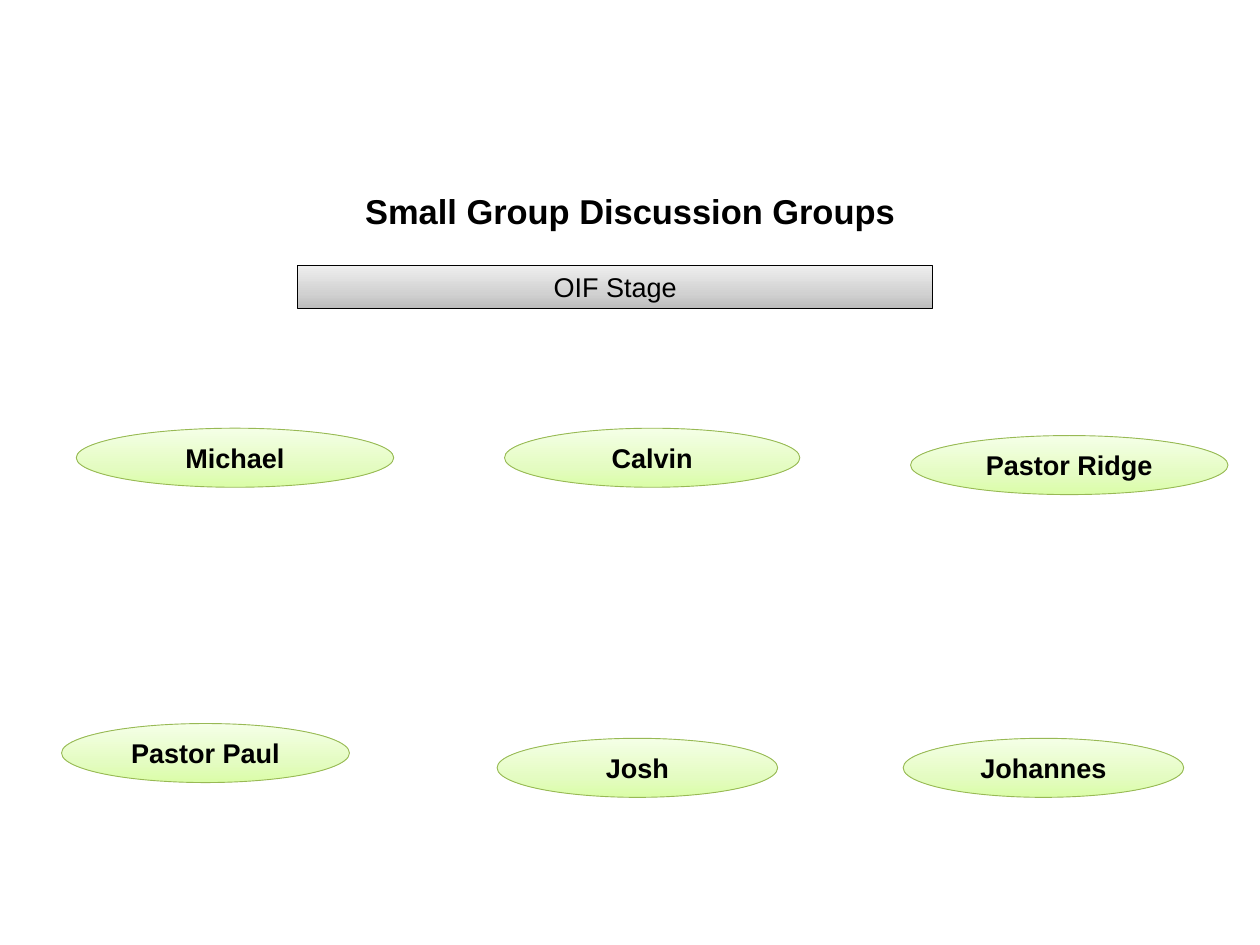
from copy import deepcopy
from dataclasses import dataclass

from pptx import Presentation
from pptx.dml.color import RGBColor
from pptx.enum.shapes import MSO_SHAPE
from pptx.enum.text import MSO_ANCHOR, MSO_AUTO_SIZE, PP_ALIGN
from pptx.util import Inches, Pt

ELLIPSE = MSO_SHAPE.OVAL
RECTANGLE = MSO_SHAPE.RECTANGLE
MIDDLE = MSO_ANCHOR.MIDDLE
FIXED_SIZE = MSO_AUTO_SIZE.NONE
CENTER = PP_ALIGN.CENTER
TITLE_ONLY = 5

HEADING = ("Small Group Discussion Groups", (49, 75, 414, 21))
STAGE = ("OIF Stage", (121, 108, 258, 17.3))
LEADER_HEIGHT = 24
LEADERS = [
    ("Michael", 31, 174, 129),
    ("Pastor Paul", 25, 294, 117),
    ("Johannes", 367, 300, 114),
    ("Josh", 202, 300, 114),
    ("Calvin", 205, 174, 120),
    ("Pastor Ridge", 370, 177, 129),
]

GRID_COLUMNS, GRID_ROWS = 512, 384
CELL = Inches(1) / 36


@dataclass(frozen=True)
class Theme:
    font: str = "Arial"
    ink: str = "000000"
    heading_size: int = 28
    label_size: int = 22
    line_width: float = 0.75
    inset: float = 0.05
    leader_line: str = "98B955"
    leader_fill: tuple = ("DAFDA7", "E4FCC2", "F5FFE7")
    stage_fill: tuple = ("BDBDBD", "D1D1D1", "EEEEEE")
    fill_stops: tuple = (0, 0.35, 1)
    fill_angle: int = 90


THEME = Theme()


def cells(*counts):
    return [round(count * CELL) for count in counts]


def write(shape, text, size, bold):
    frame = shape.text_frame
    frame.text = text
    frame.word_wrap = True
    frame.auto_size = FIXED_SIZE
    frame.vertical_anchor = MIDDLE
    frame.margin_left = frame.margin_right = Inches(THEME.inset)
    frame.margin_top = frame.margin_bottom = Inches(THEME.inset)
    paragraph = frame.paragraphs[0]
    paragraph.alignment = CENTER
    font = paragraph.runs[0].font
    font.name = THEME.font
    font.size = Pt(size)
    font.bold = bold
    font.color.rgb = RGBColor.from_string(THEME.ink)


def shade(fill, colors):
    fill.gradient()
    fill.gradient_angle = THEME.fill_angle
    stop_list = fill._fill._gradFill.gsLst
    stop_list.append(deepcopy(stop_list[-1]))
    for stop, color, position in zip(fill.gradient_stops, colors, THEME.fill_stops):
        stop.color.rgb = RGBColor.from_string(color)
        stop.position = position


def add_label(slide, outline, text, box, colors, line_color, bold):
    label = slide.shapes.add_shape(outline, *cells(*box))
    label.shadow.inherit = False
    shade(label.fill, colors)
    label.line.color.rgb = RGBColor.from_string(line_color)
    label.line.width = Pt(THEME.line_width)
    write(label, text, THEME.label_size, bold)


def main():
    deck = Presentation()
    deck.slide_width, deck.slide_height = cells(GRID_COLUMNS, GRID_ROWS)
    slide = deck.slides.add_slide(deck.slide_layouts[TITLE_ONLY])

    text, box = HEADING
    heading = slide.shapes.title
    heading.left, heading.top, heading.width, heading.height = cells(*box)
    write(heading, text, THEME.heading_size, True)

    text, box = STAGE
    add_label(slide, RECTANGLE, text, box, THEME.stage_fill, THEME.ink, False)

    for leader, left, top, width in LEADERS:
        box = (left, top, width, LEADER_HEIGHT)
        add_label(slide, ELLIPSE, leader, box, THEME.leader_fill, THEME.leader_line, True)

    deck.save("out.pptx")


if __name__ == "__main__":
    main()
